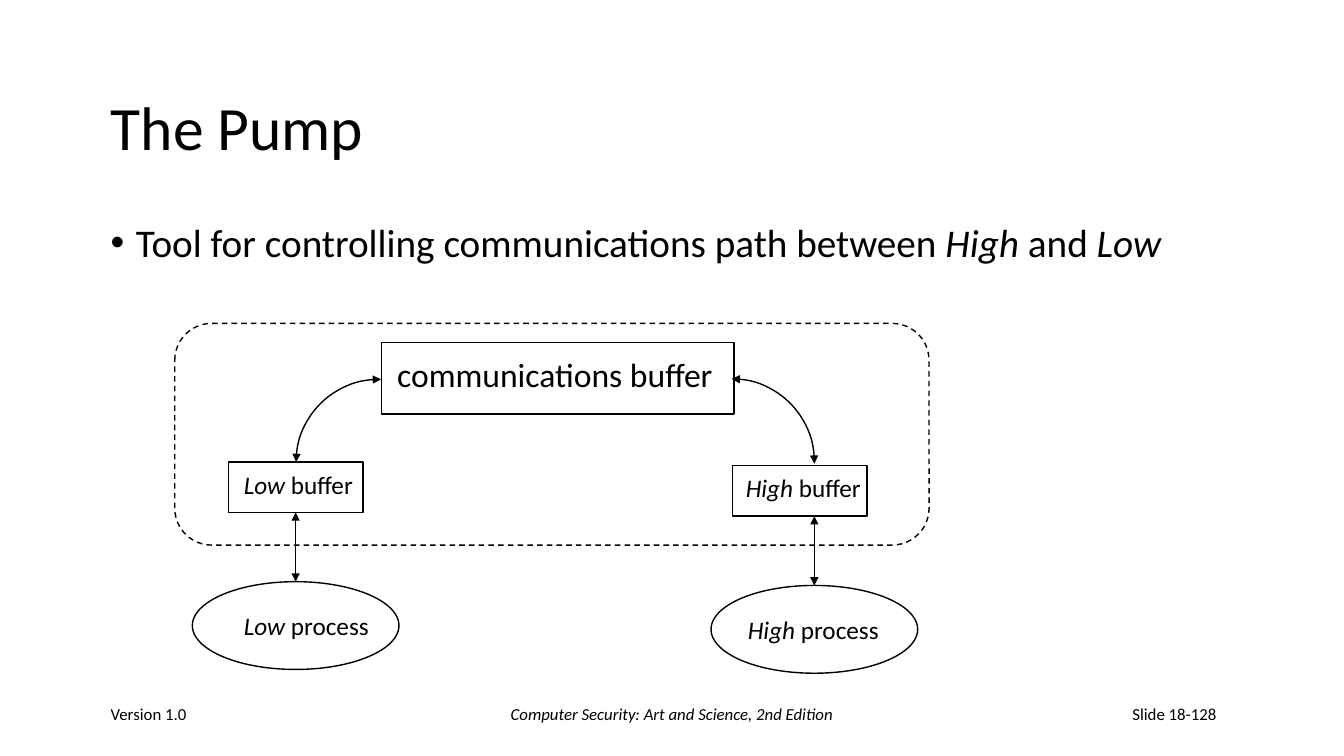
from lxml import etree
from pptx import Presentation, util as u
from pptx.dml.color import RGBColor
from pptx.enum import dml, shapes, text
from pptx.oxml.ns import qn

COLUMNS, ROWS = 160, 90


def colour(value):
    """Turn a hex string into a colour."""
    return RGBColor.from_string(value)


class Sketch:
    """Draws black outline elements on one slide, measured in grid cells."""

    font = "Calibri"
    ink = "000000"

    def __init__(self, deck):
        """Add a blank white slide and work out the grid cell."""
        self.page = deck.slides.add_slide(deck.slide_layouts[6])
        self.page.background.fill.solid()
        self.page.background.fill.fore_color.rgb = colour("FFFFFF")
        self.column = deck.slide_width / COLUMNS
        self.row = deck.slide_height / ROWS

    def place(self, *lengths):
        """Convert alternating columns and rows to slide units."""
        return [round(n * (self.row if i % 2 else self.column)) for i, n in enumerate(lengths)]

    def words(self, at, runs, size, align="LEFT", anchor="MIDDLE", wrap=True, spacing=None, bullet=False):
        """Write one paragraph of (wording, italic) runs."""
        box = self.page.shapes.add_textbox(*self.place(*at))
        frame = box.text_frame
        frame.word_wrap = wrap
        frame.vertical_anchor = text.MSO_ANCHOR[anchor]
        if not wrap:
            frame.auto_size = text.MSO_AUTO_SIZE.SHAPE_TO_FIT_TEXT
        para = frame.paragraphs[0]
        para.alignment = text.PP_ALIGN[align]
        if spacing:
            para.line_spacing = spacing
        if bullet:
            props = para._p.get_or_add_pPr()
            props.set("marL", str(u.Inches(0.25)))
            props.set("indent", str(u.Inches(-0.25)))
            etree.SubElement(props, qn("a:buFont")).set("typeface", "Arial")
            etree.SubElement(props, qn("a:buChar")).set("char", "•")
        for wording, italic in runs:
            span = para.add_run()
            span.text = wording
            span.font.name = self.font
            span.font.size = u.Pt(size)
            span.font.italic = italic
            span.font.color.rgb = colour(self.ink)

    def label(self, at, runs, size):
        """Write an unwrapped diagram label."""
        self.words(at, runs, size, anchor="TOP", wrap=False)

    def stroke(self, item):
        """Give an element the thin black line."""
        item.line.color.rgb = colour(self.ink)
        item.line.width = u.Pt(1)

    def arrowheads(self, item):
        """Put a triangle at both ends of a line."""
        line = item.line._get_or_add_ln()
        for end in ("a:headEnd", "a:tailEnd"):
            etree.SubElement(line, qn(end)).set("type", "triangle")

    def outline(self, kind, at, dashed=False):
        """Draw an unfilled preset shape."""
        shape = self.page.shapes.add_shape(shapes.MSO_SHAPE[kind], *self.place(*at))
        shape.shadow.inherit = False
        shape.fill.background()
        self.stroke(shape)
        if dashed:
            shape.line.dash_style = dml.MSO_LINE.DASH
        return shape

    def curve(self, at, rotation):
        """Draw a quarter arc with two arrowheads."""
        arc = self.outline("ARC", at)
        arc.adjustments[0], arc.adjustments[1] = 162, 0.73
        arc.rotation = rotation
        self.arrowheads(arc)

    def arrow(self, ends, start=None, finish=None):
        """Draw a two-headed line, joined to the shapes it meets at mid-side."""
        line = self.page.shapes.add_connector(shapes.MSO_CONNECTOR.STRAIGHT, *self.place(*ends))
        self.stroke(line)
        self.arrowheads(line)
        etree.SubElement(line._element.spPr, qn("a:effectLst"))
        if start:
            line.begin_connect(start, 2)
        if finish:
            line.end_connect(finish, 0)


def main():
    """Build the slide about the pump."""
    deck = Presentation()
    deck.slide_width, deck.slide_height = u.Inches(13.33), u.Inches(7.5)
    sketch = Sketch(deck)

    sketch.words((12, 8, 136, 15), [("The Pump", False)], 44, spacing=0.9)
    statement = [("Tool for controlling communications path between ", False),
                 ("High", True), (" and ", False), ("Low", True)]
    sketch.words((12, 26, 136, 26), statement, 28, anchor="TOP", spacing=0.9, bullet=True)
    footers = [(12, 33.4, "LEFT", "Version 1.0", False),
               (54.7, 50.6, "CENTER", "Computer Security: Art and Science, 2nd Edition", True),
               (112.6, 33.4, "RIGHT", "Slide 18-128", False)]
    for left, width, align, wording, italic in footers:
        sketch.words((left, 82, width, 6), [(wording, italic)], 12, align)

    sketch.outline("ROUNDED_RECTANGLE", (20.8, 38.5, 89.8, 26.4), dashed=True)
    sketch.outline("RECTANGLE", (45.4, 40.8, 42, 8.5))
    sketch.label((46.1, 41.6, 40.4, 6), [("communications buffer", False)], 24)

    sides = [("Low", 35.2, 27.2, 55, 27.85, 55.3, 27.85, 15.6, 17.5, 270),
             ("High", 96.95, 87.2, 55.45, 87.6, 55.6, 87.85, 16.3, 18.1, 0)]
    for (level, axis, box_left, top, buffer_left, buffer_top,
         process_left, buffer_width, process_width, rotation) in sides:
        buffer = sketch.outline("RECTANGLE", (box_left, top, 16, 6))
        sketch.label((buffer_left, buffer_top, buffer_width, 4.8), [(level, True), (" buffer", False)], 18)
        sketch.curve((axis - 19.7 * (rotation == 0) + 0.1 * (rotation > 0), 45.1, 19.7, 19.8), rotation)
        process = sketch.outline("OVAL", (axis - 12.3, top + 14.25, 24.6, 10.45))
        sketch.label((process_left, top + 17.05, process_width, 4.8), [(level, True), (" process", False)], 18)
        centred = abs(box_left + 8 - axis) < 0.1
        sketch.arrow((axis, top + 6, axis, top + 14.25), buffer if centred else None, process)

    deck.save("out.pptx")


if __name__ == "__main__":
    main()
